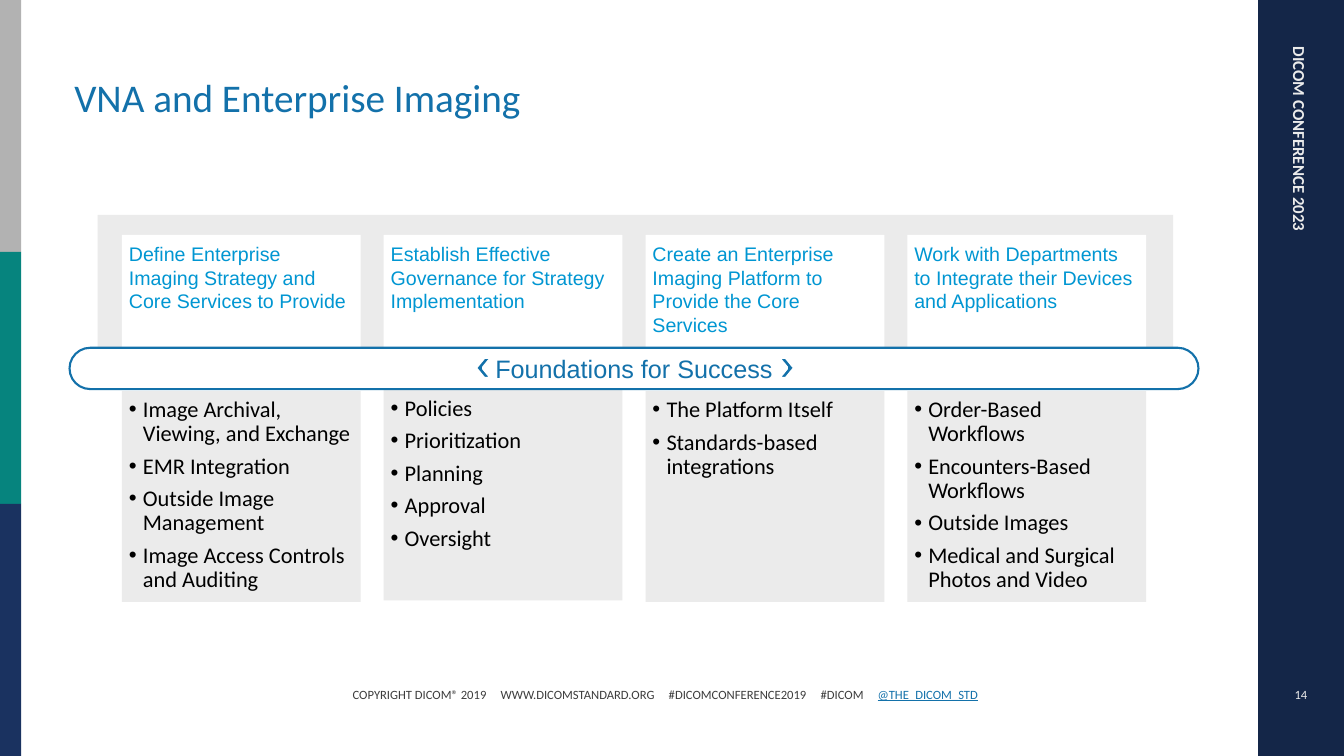
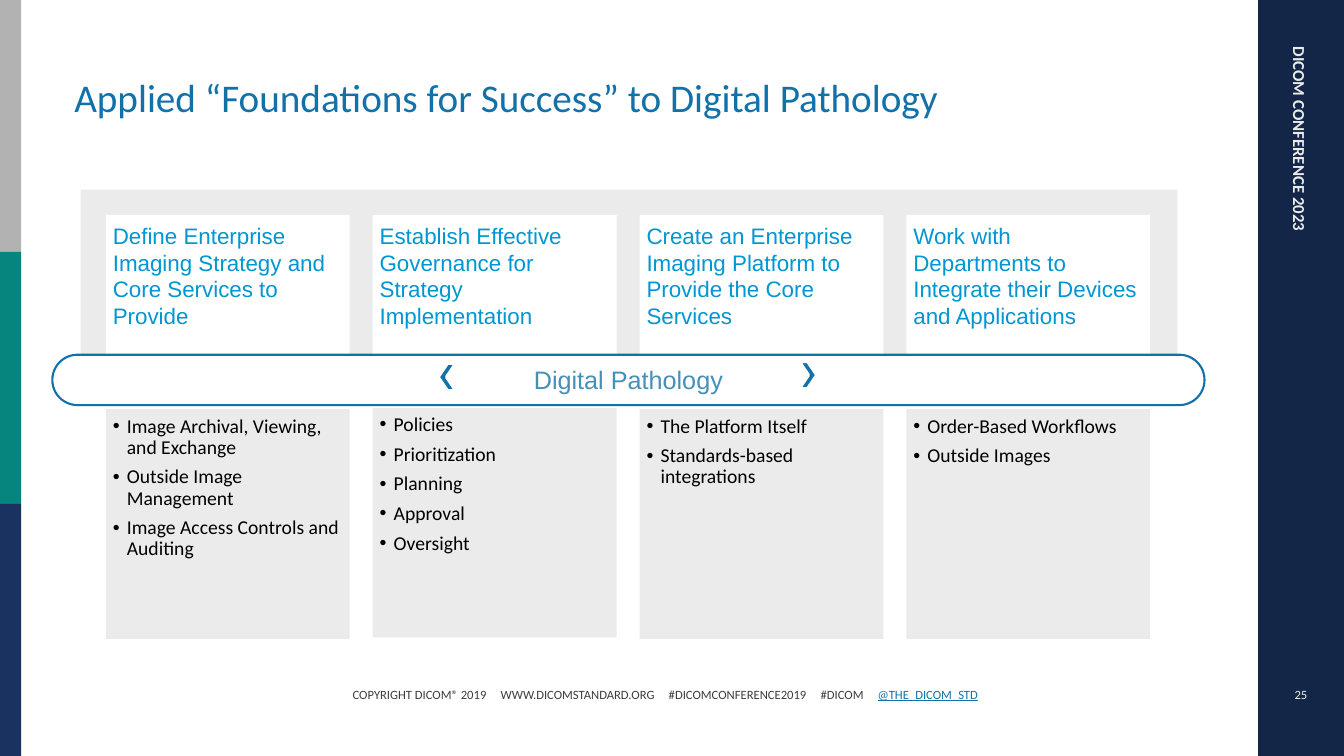
from pptx import Presentation
from pptx.dml.color import RGBColor
from pptx.enum.shapes import MSO_SHAPE
from pptx.enum.text import MSO_ANCHOR, PP_ALIGN
from pptx.oxml.ns import qn
from pptx.util import Pt
from lxml import etree

NAVY = RGBColor(0x14, 0x26, 0x48)
INDIGO = RGBColor(0x1A, 0x32, 0x60)
TEAL = RGBColor(0x06, 0x84, 0x7E)
SILVER = RGBColor(0xB2, 0xB2, 0xB2)
PALE = RGBColor(0xEB, 0xEB, 0xEB)
WHITE = RGBColor(0xFF, 0xFF, 0xFF)
BLACK = RGBColor(0, 0, 0)
DARK = RGBColor(0x3D, 0x3D, 0x3D)
BLUE = RGBColor(0x13, 0x71, 0xAA)
SKY = RGBColor(0x00, 0x96, 0xD2)
STEEL = RGBColor(0x45, 0x90, 0xB8)

# Content
EVENT = "DICOM CONFERENCE 2023"
FOOTER = ["COPYRIGHT DICOM® 2019", "WWW.DICOMSTANDARD.ORG",
          "#DICOMCONFERENCE2019", "#DICOM", "@THE_DICOM_STD"]
HEADS = [
    "Define Enterprise Imaging Strategy and Core Services to Provide",
    "Establish Effective Governance for Strategy Implementation",
    "Create an Enterprise Imaging Platform to Provide the Core Services",
    "Work with Departments to Integrate their Devices and Applications",
]
POLICY = ["Policies", "Prioritization", "Planning", "Approval", "Oversight"]
PLATFORM = ["The Platform Itself", "Standards-based integrations"]

# Boxes are left, top, width, height in points
SLIDES = [
    dict(title="VNA and Enterprise Imaging", page="14",
         bar="Foundations for Success", tint=BLUE,
         lists=[["Image Archival, Viewing, and Exchange", "EMR Integration",
                 "Outside Image Management",
                 "Image Access Controls and Auditing"],
                POLICY, PLATFORM,
                ["Order-Based Workflows", "Encounters-Based Workflows",
                 "Outside Images", "Medical and Surgical Photos and Video"]],
         panel=(69.8, 153.4, 768.2, 111.6), left=87.1, pitch=187, wide=170.6,
         head=(167.8, 85), body=(279.4, 150.5), sizes=(14, 16),
         pill=(49.7, 248.4, 806.4, 29.5),
         marks=[(555.1, 254.9, 13, 15.8), (339.1, 254.9, 13, 15.8)]),
    dict(title="Applied “Foundations for Success” to Digital Pathology",
         page="25", bar="Digital Pathology", tint=STEEL,
         lists=[["Image Archival, Viewing, and Exchange",
                 "Outside Image Management",
                 "Image Access Controls and Auditing"],
                POLICY, PLATFORM,
                ["Order-Based Workflows", "Outside Images"]],
         panel=(57.6, 135.4, 783.4, 139), left=75.6, pitch=190.6, wide=174.2,
         head=(153.4, 106.6), body=(292.3, 164), sizes=(16, 14),
         pill=(37.4, 253.4, 823, 36),
         marks=[(570.2, 257.8, 13.7, 20.2), (312.5, 259.2, 13.7, 20.2)]),
]


def style(para, size, color, name="Calibri", align=PP_ALIGN.LEFT):
    para.alignment = align
    font = para.font
    font.size, font.name, font.color.rgb = Pt(size), name, color


def block(slide, box, fill, kind=MSO_SHAPE.RECTANGLE, line=None, weight=1.5):
    shape = slide.shapes.add_shape(kind, *map(Pt, box))
    shape.shadow.inherit = False
    shape.fill.solid()
    shape.fill.fore_color.rgb = fill
    if line is None:
        shape.line.fill.background()
    else:
        shape.line.color.rgb = line
        shape.line.width = Pt(weight)
    return shape


def label(slide, box, text, size, color, align=PP_ALIGN.LEFT):
    shape = slide.shapes.add_textbox(*map(Pt, box))
    frame = shape.text_frame
    frame.word_wrap = True
    frame.vertical_anchor = MSO_ANCHOR.MIDDLE
    frame.text = text
    style(frame.paragraphs[0], size, color, align=align)
    return shape


def inset(shape, gap, anchor):
    frame = shape.text_frame
    frame.margin_left = frame.margin_right = Pt(gap)
    frame.margin_top = frame.margin_bottom = Pt(gap)
    frame.word_wrap = True
    frame.vertical_anchor = anchor
    return frame


def bullet(para):
    props = para._p.get_or_add_pPr()
    props.set("marL", str(Pt(10)))
    props.set("indent", str(-Pt(10)))
    etree.SubElement(props, qn("a:buFont")).set("typeface", "Arial")
    etree.SubElement(props, qn("a:buChar")).set("char", "•")


def footer(slide):
    shape = label(slide, (244.8, 481.7, 552.2, 28.8), "", 9, DARK)
    para = shape.text_frame.paragraphs[0]
    tabs = etree.SubElement(para._p.get_or_add_pPr(), qn("a:tabLst"))
    # Tab list must stand before the default run properties
    tabs.getparent().insert(0, tabs)
    for stop in (105.8, 225.8, 334.3, 375):
        tab = etree.SubElement(tabs, qn("a:tab"))
        tab.set("pos", str(Pt(stop)))
        tab.set("algn", "l")
    para.add_run().text = "\t".join(FOOTER[:-1]) + "\t"
    handle = para.add_run()
    handle.text = FOOTER[-1]
    handle.font.color.rgb = BLUE
    handle.font.underline = True


def frame_page(slide, title, page):
    # Side bands
    block(slide, (898.6, 0, 61.4, 540), NAVY)
    for row, color in enumerate((SILVER, TEAL, INDIGO)):
        block(slide, (0, row * 180, 15.1, 180), color)
    side = label(slide, (764.6, 179.3, 327.6, 21.6), EVENT, 12, PALE)
    side.rotation = 90
    side.text_frame.paragraphs[0].font.bold = True
    # Title, footer and page number
    label(slide, (46, 29.5, 806.4, 80), title, 28, BLUE)
    footer(slide)
    label(slide, (898.6, 481.7, 61.4, 28.8), page, 9, PALE, PP_ALIGN.CENTER)


def column(slide, data, col):
    left, wide = data["left"] + col * data["pitch"], data["wide"]
    # Heading card
    top, high = data["head"]
    card = block(slide, (left, top, wide, high), WHITE)
    frame = inset(card, 5, MSO_ANCHOR.TOP)
    frame.text = HEADS[col]
    style(frame.paragraphs[0], data["sizes"][0], SKY, "Arial")
    # Bullet card; the second one sits a point higher
    top, high = data["body"]
    card = block(slide, (left, top - (col == 1), wide, high), PALE)
    frame = inset(card, 5, MSO_ANCHOR.TOP)
    frame.text = "\n".join(data["lists"][col])
    for row, para in enumerate(frame.paragraphs):
        bullet(para)
        para.line_spacing = 0.9
        para.space_before = Pt(3 if row else 0)
        para.space_after = Pt(3)
        style(para, data["sizes"][1], BLACK)


def main():
    deck = Presentation()
    deck.slide_width, deck.slide_height = Pt(960), Pt(540)
    for data in SLIDES:
        slide = deck.slides.add_slide(deck.slide_layouts[6])
        frame_page(slide, data["title"], data["page"])
        block(slide, data["panel"], PALE)
        for col in range(len(HEADS)):
            column(slide, data, col)
        # Pill across the columns, with a chevron on each side
        pill = block(slide, data["pill"], WHITE,
                     MSO_SHAPE.ROUNDED_RECTANGLE, BLUE)
        pill.adjustments[0] = 0.5
        frame = inset(pill, 0, MSO_ANCHOR.MIDDLE)
        frame.text = data["bar"]
        style(frame.paragraphs[0], 18, data["tint"], "Arial", PP_ALIGN.CENTER)
        for box, turn in zip(data["marks"], (0, 180)):
            mark = block(slide, box, BLUE, MSO_SHAPE.CHEVRON, WHITE, 3)
            mark.rotation = turn
    deck.save("out.pptx")


if __name__ == "__main__":
    main()
